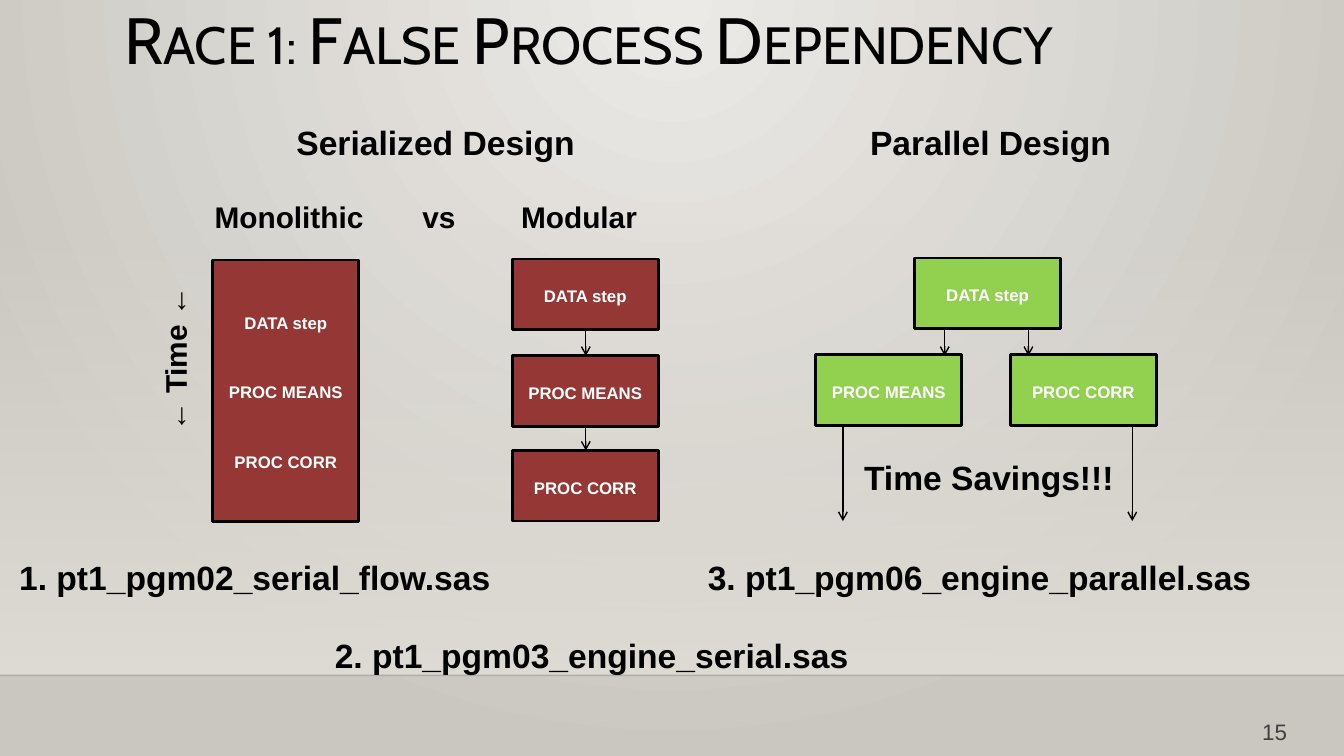
from pptx import Presentation
from pptx import util as u
from pptx.dml.color import RGBColor
from pptx.enum import shapes, text
from pptx.oxml import ns, xmlchemy

PT = u.Pt
IN = u.Inches


def rgb(code):
    return RGBColor.from_string(code)


def sub(parent, tag, **attrs):
    node = xmlchemy.OxmlElement(tag)
    for key, val in attrs.items():
        node.set(key, str(val))
    parent.append(node)
    return node


class Deck:
    font = "Arial"
    ink = "000000"
    pads = (0.13, 0.07)

    def __init__(self):
        self.prs = Presentation()
        self.prs.slide_width, self.prs.slide_height = IN(13.33), IN(7.5)
        self.slide = self.prs.slides.add_slide(self.prs.slide_layouts[5])

    def fade(self, fill, first, last):
        fill.gradient()
        for stop, pos, code in zip(fill.gradient_stops, (0, 1), (first, last)):
            stop.position = pos
            stop.color.rgb = rgb(code)

    def back(self, first, last):
        self.fade(self.slide.background.fill, first, last)
        lin = self.slide._element.find(".//" + ns.qn("a:lin"))
        grad = lin.getparent()
        grad.remove(lin)
        ring = sub(grad, "a:path", path="circle")
        sub(ring, "a:fillToRect", l=43000, t=0, r=43000, b=100000)

    def glow(self, x, y, w, h, code):
        """Rectangle that fades in from clear at its top."""
        rect = self.shape(x, y, w, h)
        self.fade(rect.fill, code, code)
        rect.fill.gradient_angle = 270
        rect.line.fill.background()
        tint = rect._element.find(".//" + ns.qn("a:srgbClr"))
        sub(tint, "a:alpha", val=0)

    def shape(self, x, y, w, h):
        rect = self.slide.shapes.add_shape(
            shapes.MSO_SHAPE.RECTANGLE, IN(x), IN(y), IN(w), IN(h))
        rect.shadow.inherit = False
        return rect

    def style(self, para, size, color, bold=True, space=1.15, font=None):
        para.line_spacing = space
        para.font.name = font or self.font
        para.font.size = PT(size)
        para.font.bold = bold
        para.font.color.rgb = rgb(color)

    def inset(self, frame, pads):
        frame.margin_left = frame.margin_right = IN(pads[0])
        frame.margin_top = frame.margin_bottom = IN(pads[1])
        frame.word_wrap = True

    def title(self, words, x, y, w, h):
        head = self.slide.shapes.title
        head.left, head.top, head.width, head.height = map(IN, (x, y, w, h))
        frame = head.text_frame
        frame.text = words
        frame.vertical_anchor = text.MSO_ANCHOR.MIDDLE
        self.inset(frame, (0.1, 0.05))
        para = frame.paragraphs[0]
        para.alignment = text.PP_ALIGN.LEFT
        self.style(para, 46.7, self.ink, False, 0.9, "Cabin")
        para.runs[0]._r.get_or_add_rPr().set("cap", "small")

    def label(self, words, x, y, w, h=0.54, size=24, color=ink, bold=True,
              pads=pads, space=1.15, turn=0, tabs=()):
        area = self.slide.shapes.add_textbox(IN(x), IN(y), IN(w), IN(h))
        area.rotation = turn
        frame = area.text_frame
        frame.text = words
        self.inset(frame, pads)
        para = frame.paragraphs[0]
        para.alignment = text.PP_ALIGN.LEFT
        para.line_spacing = space
        if tabs:
            stops = sub(para._p.get_or_add_pPr(), "a:tabLst")
            for pos in tabs:
                sub(stops, "a:tab", pos=IN(pos), algn="l")
        self.style(para, size, color, bold, space)

    def box(self, steps, x, y, color, h=0.7, gap=0):
        rect = self.shape(x, y, 1.45, h)
        rect.fill.solid()
        rect.fill.fore_color.rgb = rgb(color)
        rect.line.color.rgb = rgb(self.ink)
        rect.line.width = PT(2)
        frame = rect.text_frame
        frame.text = "\n".join(steps)
        frame.vertical_anchor = text.MSO_ANCHOR.MIDDLE
        self.inset(frame, self.pads)
        for num, para in enumerate(frame.paragraphs):
            para.alignment = text.PP_ALIGN.CENTER
            if num:
                para.space_before = PT(gap)
            self.style(para, 12, "FFFFFF")

    def line(self, x1, y1, x2, y2, color=ink):
        link = self.slide.shapes.add_connector(
            shapes.MSO_CONNECTOR.STRAIGHT, IN(x1), IN(y1), IN(x2), IN(y2))
        link.line.color.rgb = rgb(color)
        link.line.width = PT(1)
        sub(link._element.spPr, "a:effectLst")
        return link

    def arrow(self, x, top, end):
        link = self.line(x, top, x, end)
        sub(link.line._get_or_add_ln(), "a:tailEnd", type="arrow")

    def rule(self, y, color, alpha):
        link = self.line(0, y, 13.33, y, color)
        tint = link._element.spPr.find(".//" + ns.qn("a:srgbClr"))
        sub(tint, "a:alpha", val=alpha * 1000)


def main():
    deck = Deck()
    red, green = "953735", "92D050"
    steps = ["DATA step", "PROC MEANS", "PROC CORR"]

    # Backdrop, page number and title
    deck.back("ECEAE7", "CAC7C1")
    deck.glow(0, 2.21, 13.33, 4.49, "DFDBD5")
    deck.rule(6.7, "000001", 20)
    deck.label("15", 12.42, 7.08, 0.48, 0.37, 16, "404040", False,
               (0.1, 0.05), 1)
    deck.title("Race 1: False Process Dependency", 1.13, 0, 11.09, 0.86)

    # Headings
    deck.label("Serialized Design", 2.81, 1.08, 3.19)
    deck.label("Parallel Design", 8.5, 1.08, 2.7)
    deck.label("Monolithic\tvs\tModular", 2, 1.85, 4.66, size=21.3,
               tabs=(2.06, 3.04))

    # Monolithic design
    deck.label("← Time ←", 0.83, 3.27, 1.75, size=21.3, turn=270)
    deck.box(steps, 2.11, 2.58, red, 2.59, 33)

    # Modular design
    for step, top in zip(steps, (2.57, 3.53, 4.47)):
        deck.box([step], 5.08, top, red)
    for top, end in ((3.27, 3.53), (4.23, 4.47)):
        deck.arrow(5.81, top, end)

    # Parallel design
    for step, x, top in zip(steps, (9.07, 8.09, 10.02), (2.56, 3.52, 3.52)):
        deck.box([step], x, top, green)
    for x in (9.37, 10.2):
        deck.arrow(x, 3.27, 3.53)
    for x in (8.36, 11.23):
        deck.arrow(x, 4.23, 5.17)
    deck.label("Time Savings!!!", 8.57, 4.47, 2.63, 0.64, pads=(0, 0))

    # Programs
    deck.label("1. pt1_pgm02_serial_flow.sas", 0.06, 5.4, 5)
    deck.label("2. pt1_pgm03_engine_serial.sas", 3.19, 6.17, 5.38)
    deck.label("3. pt1_pgm06_engine_parallel.sas", 6.89, 5.4, 5.78)

    deck.prs.save("out.pptx")


if __name__ == "__main__":
    main()
